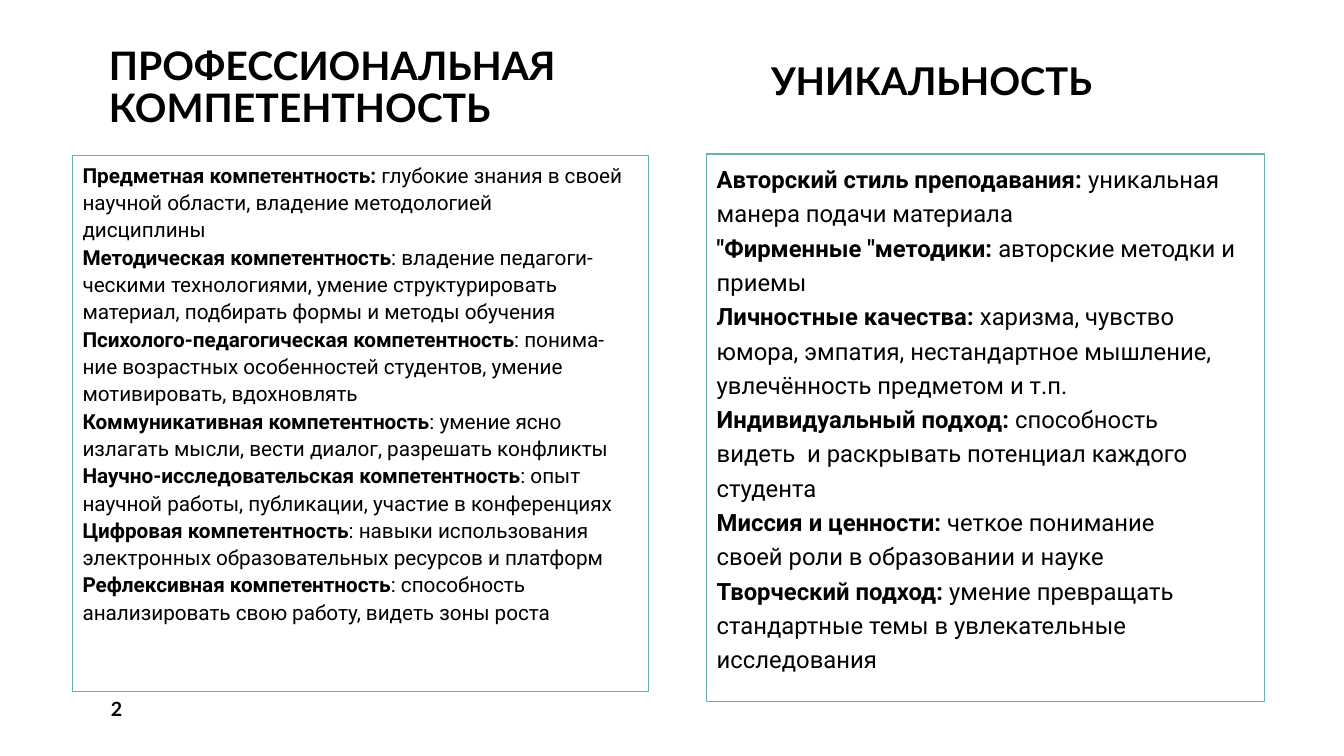
"""Build a slide comparing professional competence with a teacher's uniqueness."""
from pptx import Presentation
from pptx.dml.color import RGBColor
from pptx.enum.shapes import MSO_SHAPE
from pptx.enum.text import MSO_ANCHOR, PP_ALIGN
from pptx.util import Inches, Pt

RECTANGLE = MSO_SHAPE.RECTANGLE
LEFT = PP_ALIGN.LEFT
TOP, MIDDLE, BOTTOM = MSO_ANCHOR.TOP, MSO_ANCHOR.MIDDLE, MSO_ANCHOR.BOTTOM
COLORS = {"text": "000000", "panel": "FFFFFF", "border": "66B2B0"}

COMPETENCES = [
    ("Предметная компетентность: ", "глубокие знания в своей научной области, владение методологией "),
    ("", "дисциплины"),
    ("Методическая компетентность", ": владение педагоги-ческими технологиями, умение структурировать "),
    ("", "материал, подбирать формы и методы обучения"),
    ("Психолого‑педагогическая компетентность",
     ": понима-ние возрастных особенностей студентов, умение мотивировать, вдохновлять"),
    ("Коммуникативная компетентность", ": умение ясно "),
    ("", "излагать мысли, вести диалог, разрешать конфликты"),
    ("Научно‑исследовательская компетентность", ": опыт "),
    ("", "научной работы, публикации, участие в конференциях"),
    ("Цифровая компетентность", ": навыки использования "),
    ("", "электронных образовательных ресурсов и платформ"),
    ("Рефлексивная компетентность", ": способность "),
    ("", "анализировать свою работу, видеть зоны роста"),
]
UNIQUENESS = [
    ("Авторский стиль преподавания:", " уникальная манера подачи материала"),
    ('"Фирменные "методики:', " авторские методки и приемы"),
    ("Личностные качества:", " харизма, чувство "),
    ("", "юмора, эмпатия, нестандартное мышление, "),
    ("", "увлечённость предметом и т.п."),
    ("Индивидуальный подход:", " способность "),
    ("", "видеть  и раскрывать потенциал каждого "),
    ("", "студента"),
    ("Миссия и ценности:", " четкое понимание "),
    ("", "своей роли в образовании и науке"),
    ("Творческий подход:", " умение превращать "),
    ("", "стандартные темы в увлекательные "),
    ("", "исследования"),
]


def format_run(run, font_name, size, bold):
    run.font.name = font_name
    run.font.size = Pt(size)
    run.font.bold = bold
    run.font.color.rgb = RGBColor.from_string(COLORS["text"])


def set_heading(shape, text, size, anchor, line_spacing):
    text_frame = shape.text_frame
    text_frame.word_wrap = True
    text_frame.vertical_anchor = anchor
    text_frame.text = text
    paragraph = text_frame.paragraphs[0]
    paragraph.alignment = LEFT
    paragraph.line_spacing = line_spacing
    for run in paragraph.runs:
        format_run(run, "Lato", size, True)


presentation = Presentation()
presentation.slide_width = Inches(13.33)
presentation.slide_height = Inches(7.5)
slide = presentation.slides.add_slide(presentation.slide_layouts[5])

title = slide.shapes.title
title.left, title.top = Inches(0.98), Inches(0.29)
title.width, title.height = Inches(5.27), Inches(1.06)
set_heading(title, "ПРОФЕССИОНАЛЬНАЯ \vКОМПЕТЕНТНОСТЬ", 28, BOTTOM, 0.9)

panels = [
    (COMPETENCES, (0.72, 1.54, 5.71, 5.32), 14.8, 1.1),
    (UNIQUENESS, (7.01, 1.53, 5.53, 5.43), 17, 1.2),
]
for entries, bounds, size, line_spacing in panels:
    panel = slide.shapes.add_shape(RECTANGLE, *map(Inches, bounds))
    panel.shadow.inherit = False
    panel.fill.solid()
    panel.fill.fore_color.rgb = RGBColor.from_string(COLORS["panel"])
    panel.line.color.rgb = RGBColor.from_string(COLORS["border"])
    panel.line.width = Pt(1)
    text_frame = panel.text_frame
    text_frame.word_wrap = True
    text_frame.vertical_anchor = TOP
    for index, (term, description) in enumerate(entries):
        paragraph = text_frame.add_paragraph() if index else text_frame.paragraphs[0]
        paragraph.alignment = LEFT
        paragraph.line_spacing = line_spacing
        for text, bold in ((term, True), (description, False)):
            if text:
                run = paragraph.add_run()
                run.text = text
                format_run(run, "Roboto", size, bold)

page_number = slide.shapes.add_textbox(Inches(1), Inches(6.83), Inches(2.92), Inches(0.4))
set_heading(page_number, "2", 14, MIDDLE, 1.0)

right_heading = slide.shapes.add_textbox(Inches(7.05), Inches(0.42), Inches(5.27), Inches(0.66))
set_heading(right_heading, "\tУНИКАЛЬНОСТЬ ", 27.3, BOTTOM, 0.9)

presentation.save("out.pptx")
